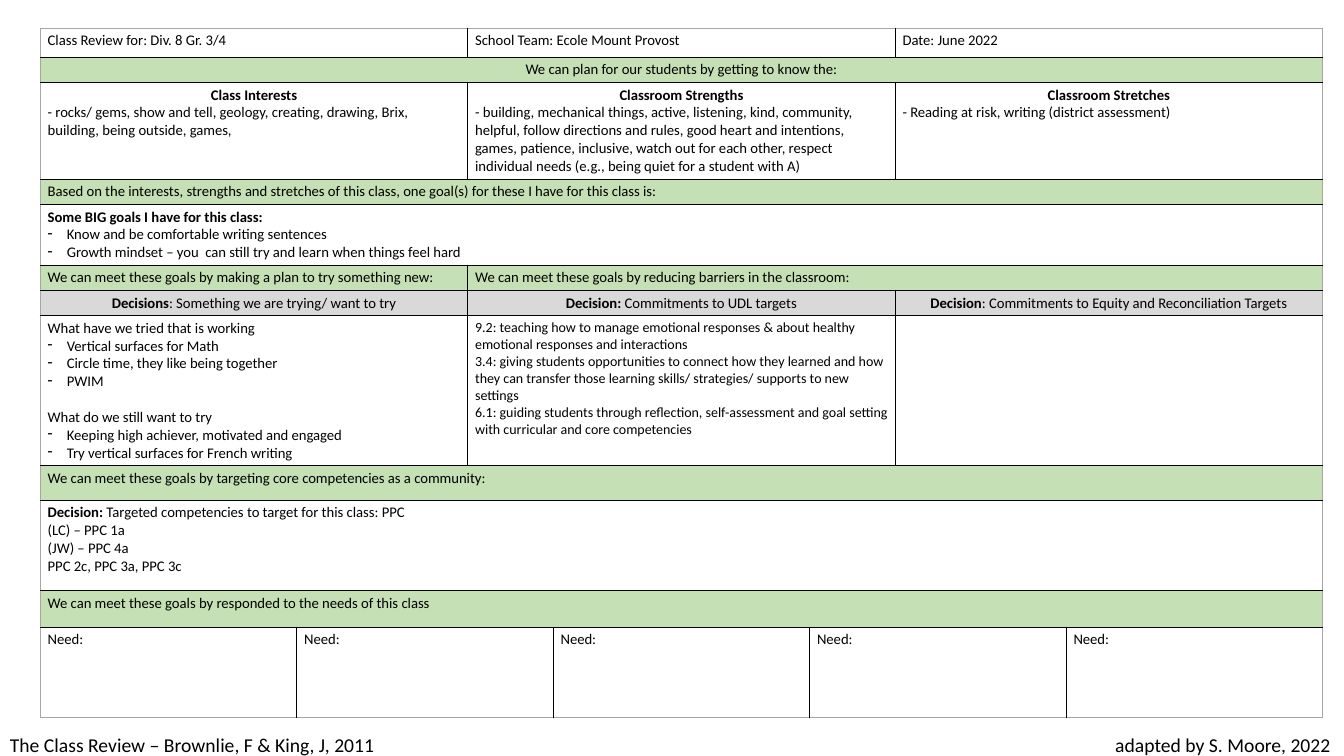
import pptx
import pptx.dml.color
import pptx.enum.text
import pptx.oxml
import pptx.oxml.ns
import pptx.util

Inches, Pt = pptx.util.Inches, pptx.util.Pt
ALIGN = pptx.enum.text.PP_ALIGN
FONT, BODY, SMALL, FOOTER = "Calibri", 10.5, 10, 14
BLACK, WHITE, GREEN, GREY, EDGE = "000000", "FFFFFF", "C5E0B4", "D9D9D9", "A6A6A6"

# Column grid: fifteen units hold both thirds and fifths
UNIT = 12.72 / 15
COLUMNS = [3, 2, 1, 3, 1, 2, 3]
FULL, THIRDS, FIFTHS, SPLIT = [7], [2, 3, 2], [1, 2, 1, 2, 1], [2, 5]


def color(value):
    return pptx.dml.color.RGBColor.from_string(value)


def line(text, lead="", **style):
    """A paragraph with an optional bold lead."""
    return {"lead": lead, "text": text, **style}


def title(lead, text=""):
    return line(text, lead, align=ALIGN.CENTER)


def item(text):
    return line(text, bullet=True)


# Each row: height, fill, spans, paragraphs of each cell
ROWS = [
    (0.29, WHITE, THIRDS, [
        [line("Class Review for: Div. 8 Gr. 3/4")],
        [line("School Team: Ecole Mount Provost")],
        [line("Date: June 2022")]]),
    (0.25, GREEN, FULL, [[title("", "We can plan for our students by getting to know the:")]]),
    (0.96, WHITE, THIRDS, [
        [title("Class Interests"),
         line("- rocks/ gems, show and tell, geology, creating, drawing, Brix, "
              "building, being outside, games,")],
        [title("Classroom Strengths"),
         line("- building, mechanical things, active, listening, kind, community, "
              "helpful, follow directions and rules, good heart and intentions, games, "
              "patience, inclusive, watch out for each other, respect individual needs "
              "(e.g., being quiet for a student with A)")],
        [title("Classroom Stretches"),
         line("- Reading at risk, writing (district assessment)")]]),
    (0.25, GREEN, FULL, [[line("Based on the interests, strengths and stretches of this class, "
                               "one goal(s) for these I have for this class is:")]]),
    (0.6, WHITE, FULL, [
        [line("", "Some BIG goals I have for this class:"),
         item("Know and be comfortable writing sentences"),
         item("Growth mindset – you  can still try and learn when things feel hard")]]),
    (0.25, GREEN, SPLIT, [
        [line("We can meet these goals by making a plan to try something new:")],
        [line("We can meet these goals by reducing barriers in the classroom:")]]),
    (0.25, GREY, THIRDS, [
        [title("Decisions", ": Something we are trying/ want to try")],
        [title("Decision: ", "Commitments to UDL targets")],
        [title("Decision", ": Commitments to Equity and Reconciliation Targets")]]),
    (1.49, WHITE, THIRDS, [
        [line("What have we tried that is working"),
         item("Vertical surfaces for Math"),
         item("Circle time, they like being together"),
         item("PWIM"),
         line("What do we still want to try", gap=12.8),
         item("Keeping high achiever, motivated and engaged"),
         item("Try vertical surfaces for French writing")],
        [line("9.2: teaching how to manage emotional responses & about healthy "
              "emotional responses and interactions", size=SMALL),
         line("3.4: giving students opportunities to connect how they learned and how they "
              "can transfer those learning skills/ strategies/ supports to new settings",
              size=SMALL),
         line("6.1: guiding students through reflection, self-assessment and goal setting "
              "with curricular and core competencies", size=SMALL)],
        []]),
    (0.34, GREEN, FULL, [
        [line("We can meet these goals by targeting core competencies as a community:")]]),
    (0.9, WHITE, FULL, [
        [line("Targeted competencies to target for this class: PPC", "Decision: "),
         line("(LC) – PPC 1a"), line("(JW) – PPC 4a"), line("PPC 2c, PPC 3a, PPC 3c")]]),
    (0.36, GREEN, FULL, [
        [line("We can meet these goals by responded to the needs of this class")]]),
    (0.9, WHITE, FIFTHS, [[line("Need:")]] * 5),
]


def add_xml(parent, markup):
    namespace = pptx.oxml.ns.nsdecls("a")
    parent.append(pptx.oxml.parse_xml(markup.replace(" ", f" {namespace} ", 1)))


def format_span(span, size, bold=False):
    span.font.name, span.font.size, span.font.bold = FONT, Pt(size), bold
    span.font.color.rgb = color(BLACK)


def write_paragraph(para, content):
    size = content.get("size", BODY)
    if content.get("bullet"):
        properties = para._p.get_or_add_pPr()
        properties.set("marL", str(Inches(0.19)))
        properties.set("indent", str(-Inches(0.19)))
        add_xml(properties, '<a:buChar char="-"/>')
    para.alignment = content.get("align", ALIGN.LEFT)
    if "gap" in content:
        para.space_before = Pt(content["gap"])
    for text, bold in ((content["lead"], True), (content["text"], False)):
        if text:
            span = para.add_run()
            span.text = text
            format_span(span, size, bold)


def draw_borders(cell, sides):
    properties = cell._tc.get_or_add_tcPr()
    for side, value in sides.items():
        add_xml(properties, f'<a:ln{side} w="{Pt(1)}"><a:solidFill><a:srgbClr val="{value}"/>'
                            f'</a:solidFill></a:ln{side}>')


def fill_cell(cell, fill, paragraphs):
    cell.margin_left = cell.margin_right = Pt(5.3)
    cell.margin_top = cell.margin_bottom = Pt(2.6)
    cell.fill.solid()
    cell.fill.fore_color.rgb = color(fill)
    frame = cell.text_frame
    for index, content in enumerate(paragraphs):
        write_paragraph(frame.add_paragraph() if index else frame.paragraphs[0], content)


def add_review_table(page):
    height = sum(row[0] for row in ROWS)
    table = page.shapes.add_table(len(ROWS), len(COLUMNS), Inches(0.4), Inches(0.28),
                                  Inches(UNIT * sum(COLUMNS)), Inches(height)).table
    table.first_row = table.horz_banding = False
    for column, units in zip(table.columns, COLUMNS):
        column.width = Inches(UNIT * units)
    for row, (row_height, fill, spans, cells) in enumerate(ROWS):
        table.rows[row].height = Inches(row_height)
        start = 0
        for width, paragraphs in zip(spans, cells):
            last = start + width - 1
            sides = {"L": EDGE if start == 0 else BLACK,
                     "R": EDGE if last == len(COLUMNS) - 1 else BLACK,
                     "T": EDGE if row == 0 else BLACK,
                     "B": EDGE if row == len(ROWS) - 1 else BLACK}
            cell = table.cell(row, start)
            draw_borders(cell, sides)
            if width > 1:
                cell.merge(table.cell(row, last))
                for column in range(start + 1, last + 1):
                    hidden = "TB" if column < last else "RTB"
                    draw_borders(table.cell(row, column), {side: sides[side] for side in hidden})
            fill_cell(cell, fill, paragraphs)
            start += width


def add_footer(page, left_text, right_text):
    box = page.shapes.add_textbox(0, Inches(7.22), Inches(13.33), Inches(0.34))
    box.text_frame.word_wrap = True
    para = box.text_frame.paragraphs[0]
    add_xml(para._p.get_or_add_pPr(),
            f'<a:tabLst ><a:tab pos="{Inches(13.1)}" algn="r"/></a:tabLst>')
    para.text = f"{left_text}\t{right_text}"
    for span in para.runs:
        format_span(span, FOOTER)


def main():
    deck = pptx.Presentation()
    deck.slide_width, deck.slide_height = Inches(13.33), Inches(7.5)
    page = deck.slides.add_slide(deck.slide_layouts[6])
    add_review_table(page)
    add_footer(page, "The Class Review – Brownlie, F & King, J, 2011",
               "adapted by S. Moore, 2022")
    deck.save("out.pptx")


if __name__ == "__main__":
    main()
